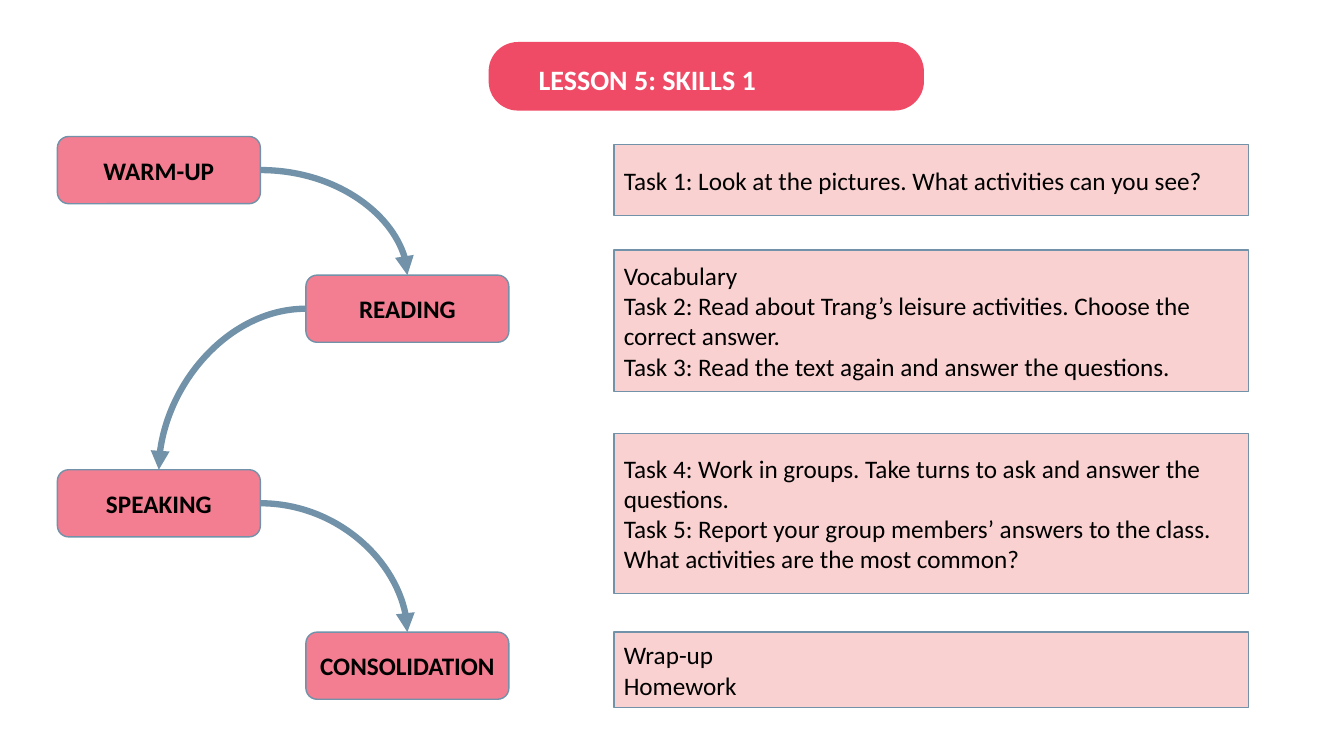
from lxml import etree
from pptx import Presentation
from pptx.dml.color import RGBColor
from pptx.enum import shapes, text
from pptx.oxml.ns import qn
from pptx.util import Pt

COLORS = {"banner": "EF4B66", "stage": "F37D91", "task": "F7A5A5",
          "line": "7192A9", "dark": "000000", "white": "FFFFFF"}


def add_box(kind, left, top, width, height, fill):
    box = slide.shapes.add_shape(kind, Pt(left), Pt(top), Pt(width), Pt(height))
    box.shadow.inherit = False
    box.fill.solid()
    box.fill.fore_color.rgb = RGBColor.from_string(COLORS[fill])
    box.line.color.rgb = RGBColor.from_string(COLORS["line"])
    box.line.width = Pt(1)
    return box


def write(box, lines, align, size=18, bold=False, color="dark",
          anchor=text.MSO_ANCHOR.MIDDLE):
    frame = box.text_frame
    frame.word_wrap = True
    frame.auto_size = text.MSO_AUTO_SIZE.NONE
    frame.vertical_anchor = anchor
    for index, line in enumerate(lines):
        para = frame.add_paragraph() if index else frame.paragraphs[0]
        para.alignment = align
        span = para.add_run()
        span.text = line
        span.font.name = "Calibri"
        span.font.size = Pt(size)
        span.font.bold = bold
        span.font.color.rgb = RGBColor.from_string(COLORS[color])


deck = Presentation()
deck.slide_width, deck.slide_height = Pt(960), Pt(540)
slide = deck.slides.add_slide(deck.slide_layouts[5])
LEFT, CENTER = text.PP_ALIGN.LEFT, text.PP_ALIGN.CENTER
ROUNDED = shapes.MSO_SHAPE.ROUNDED_RECTANGLE

# Title on its banner
banner = add_box(ROUNDED, 349, 30, 311, 49, "banner")
banner.adjustments[0] = 0.43
banner.line.fill.background()
title = slide.shapes.title
title.left, title.top, title.width, title.height = Pt(377.5), Pt(41), Pt(283), Pt(31.5)
write(title, ["LESSON 5: SKILLS 1"], LEFT, size=20, bold=True, color="white",
      anchor=text.MSO_ANCHOR.TOP)
banner.element.addnext(title.element)

# Lesson stages, alternating between two columns
stages = []
for index, (name, top) in enumerate([("WARM-UP", 97.5), ("READING", 196.5),
                                     ("SPEAKING", 335.5), ("CONSOLIDATION", 451.5)]):
    stage = add_box(ROUNDED, (41, 218.5)[index % 2], top, 145, 48, "stage")
    write(stage, [name], CENTER, bold=True)
    stage.text_frame.margin_left = stage.text_frame.margin_right = Pt(4)
    stages.append(stage)

# Curved arrows from the side of each stage to the top of the next
for index, (start, end) in enumerate(zip(stages, stages[1:])):
    arrow = slide.shapes.add_connector(shapes.MSO_CONNECTOR.CURVE, 0, 0, 0, 0)
    arrow.begin_connect(start, 1 if index % 2 else 3)
    arrow.end_connect(end, 0)
    arrow.line.color.rgb = RGBColor.from_string(COLORS["line"])
    arrow.line.width = Pt(4.5)
    properties = arrow.element.spPr
    properties.find(qn("a:prstGeom")).set("prst", "curvedConnector2")
    etree.SubElement(properties.find(qn("a:ln")), qn("a:tailEnd"), type="triangle")
    etree.SubElement(properties, qn("a:effectLst"))

# Task boxes with half-transparent fill
tasks = [
    (103, 51, ["Task 1: Look at the pictures. What activities can you see?"]),
    (178.5, 101, ["Vocabulary",
                  "Task 2: Read about Trang’s leisure activities. Choose the correct answer.",
                  "Task 3: Read the text again and answer the questions."]),
    (309.5, 114.5, ["Task 4: Work in groups. Take turns to ask and answer the questions.",
                    "Task 5: Report your group members’ answers to the class. "
                    "What activities are the most common?"]),
    (451.5, 54, ["Wrap-up", "Homework"]),
]
for top, height, lines in tasks:
    task = add_box(shapes.MSO_SHAPE.RECTANGLE, 438.5, top, 453.5, height, "task")
    color = task.element.spPr.find(qn("a:solidFill")).find(qn("a:srgbClr"))
    etree.SubElement(color, qn("a:alpha"), val="50000")
    write(task, lines, LEFT)

deck.save("out.pptx")
